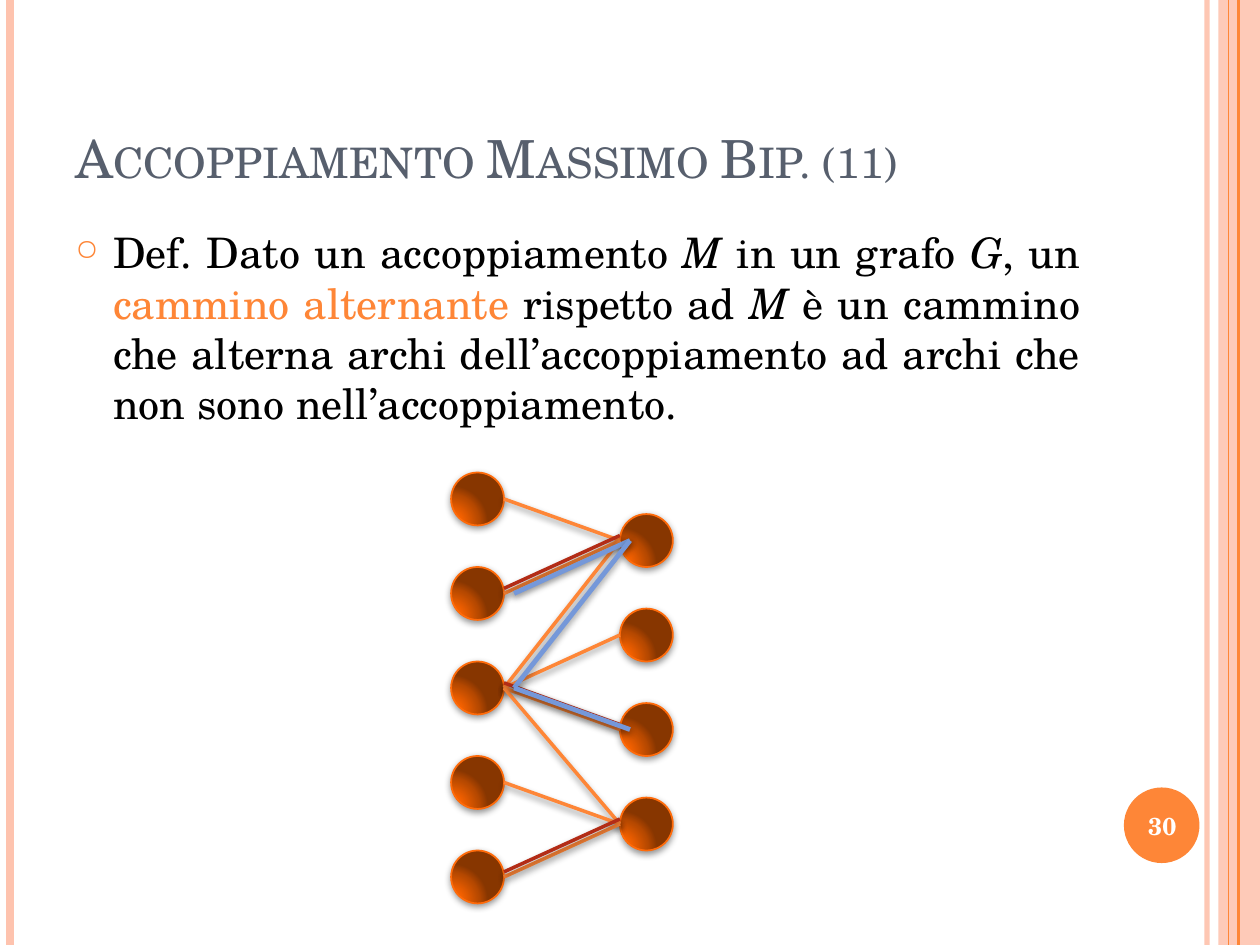
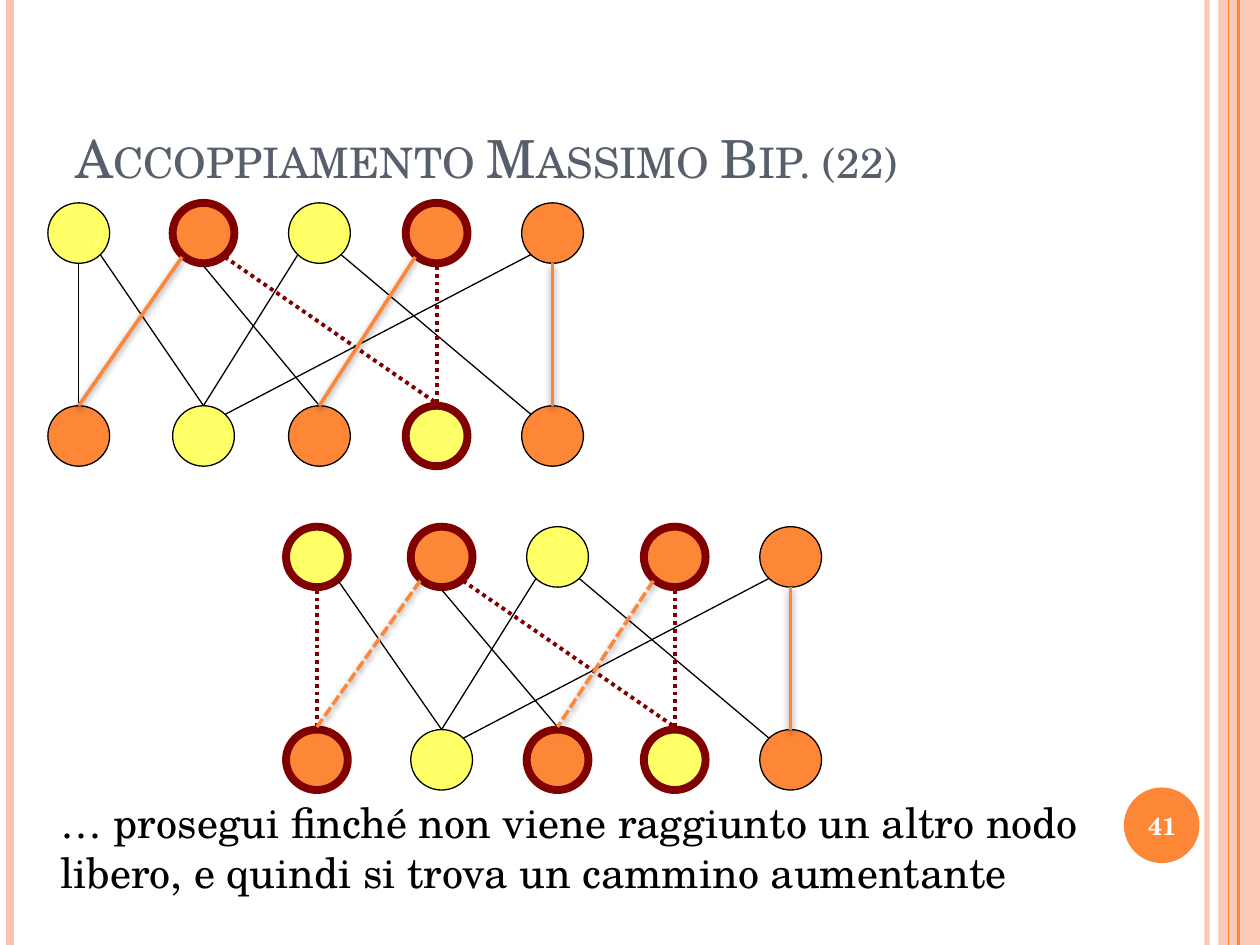
from dataclasses import dataclass
from typing import Optional

from lxml import etree
from pptx import Presentation, oxml
from pptx import util as u
from pptx.dml.color import RGBColor
from pptx.enum import dml, shapes, text
from pptx.oxml import ns
from pptx.util import Inches

FONT = "TeX Gyre Schola"
COLORS = {
    "orange": "FE8637",
    "pink": "FEC3AE",
    "slate": "575F6D",
    "black": "000000",
    "white": "FFFFFF",
    "yellow": "FFFF66",
    "maroon": "800000",
    "red": "B32C16",
    "blue": "7598D9",
    "node_edge": "FF6B0A",
}
SPHERE_STOPS = [(0, "FD6400"), (30, "F46100"), (75, "B74900"), (100, "873600")]


@dataclass(frozen=True)
class Shadow:
    alpha: int
    distance: float


@dataclass(frozen=True)
class Stroke:
    color: str
    width: float
    dash: Optional[dml.MSO_LINE] = None
    shadow: Optional[Shadow] = None
    alpha: int = 100


@dataclass(frozen=True)
class Run:
    text: str
    color: str = "black"
    italic: bool = False
    bold: bool = False
    size: int = 24
    small_caps: bool = False


@dataclass(frozen=True)
class Link:
    top: int
    bottom: int
    top_side: int = 0
    bottom_side: int = 0


@dataclass(frozen=True)
class Matching:
    left: float
    top: float
    outlined_tops: set
    outlined_bottoms: set
    dotted: set
    dashed: set


SOFT = Shadow(40, 2)
FIRM = Shadow(42, 1.6)
EDGE = Stroke("orange", 2, shadow=SOFT)
DASHED_EDGE = Stroke("orange", 2, dml.MSO_LINE.SQUARE_DOT, SOFT)
MATCHED_EDGE = Stroke("red", 2, shadow=SOFT)
PATH_EDGE = Stroke("blue", 2.75, shadow=FIRM)
THIN = Stroke("black", 0.75)
OUTLINE = Stroke("maroon", 4.5)
DOTTED = Stroke("maroon", 2.25, dml.MSO_LINE.ROUND_DOT)
SPHERE_EDGE = Stroke("node_edge", 1)

BANDS = [
    (9.58, Stroke("pink", 3, alpha=93)),
    (0.08, Stroke("pink", 4.5)),
    (9.83, Stroke("orange", 1.5)),
    (9.75, Stroke("orange", 0.75)),
]

NODE_OFFSETS = [0, 0.99, 1.91, 2.84, 3.76]
NODE_WIDTH, NODE_HEIGHT, ROW_GAP = 0.49, 0.48, 1.61
TOP_FILLS = ["yellow", "orange", "yellow", "orange", "orange"]
BOTTOM_FILLS = ["orange", "yellow", "orange", "yellow", "orange"]
LINKS = [
    Link(0, 1, 1), Link(0, 0), Link(1, 3, 1), Link(1, 2), Link(1, 0, -1),
    Link(4, 1, -1, 1), Link(4, 4), Link(2, 4, 1, -1), Link(3, 2, -1),
    Link(3, 3), Link(2, 1, -1),
]
MATCHED = {(1, 0), (4, 4), (3, 2)}
MATCHINGS = [
    Matching(0.38, 1.61, {1, 3}, {3}, {(1, 3), (3, 3)}, set()),
    Matching(2.27, 4.18, {0, 1, 3}, {0, 2, 3}, {(0, 0), (1, 3), (3, 3)}, {(1, 0), (3, 2)}),
]

SPHERE_EDGES = [(0, 0), (1, 0), (2, 0), (2, 1), (2, 2), (2, 3), (3, 3), (4, 3)]
SPHERE_MATCHED = [(1, 0), (2, 2), (4, 3)]
SPHERE_PATH = [(1, 0), (2, 0), (2, 2)]
SPHERE_SIZE, SPHERE_STEP = 0.42, 0.75
LEFT_X, LEFT_Y = 3.58, 3.75
RIGHT_X, RIGHT_Y = 4.92, 4.08

DEFINITION = [
    Run("Def. Dato un accoppiamento "),
    Run("M", italic=True),
    Run(" in un grafo "),
    Run("G", italic=True),
    Run(", un "),
    Run("cammino alternante ", "orange"),
    Run("rispetto ad "),
    Run("M", italic=True),
    Run(" è un cammino che alterna archi dell’accoppiamento ad archi che non sono nell’accoppiamento."),
]
CONCLUSION = [
    Run("… prosegui finché non viene raggiunto un altro nodo libero, e quindi si trova un cammino aumentante")
]


def rgb(name: str) -> RGBColor:
    return RGBColor.from_string(COLORS[name])


def set_alpha(element, percent: int) -> None:
    for color in element.iter(ns.qn("a:srgbClr")):
        etree.SubElement(color, ns.qn("a:alpha"), val=str(percent * 1000))


def add_shadow(effects, shadow: Shadow) -> None:
    effects.append(oxml.parse_xml(
        f'<a:outerShdw {ns.nsdecls("a")} blurRad="{u.Pt(4)}" dist="{u.Pt(shadow.distance)}" '
        f'dir="5400000" rotWithShape="0"><a:srgbClr val="{COLORS["black"]}">'
        f'<a:alpha val="{shadow.alpha * 1000}"/></a:srgbClr></a:outerShdw>'
    ))


def apply_stroke(line, stroke: Stroke) -> None:
    line.color.rgb = rgb(stroke.color)
    line.width = u.Pt(stroke.width)
    if stroke.dash is not None:
        line.dash_style = stroke.dash


def add_line(slide, start: tuple, end: tuple, stroke: Stroke) -> None:
    connector = slide.shapes.add_connector(
        shapes.MSO_CONNECTOR.STRAIGHT, *(Inches(value) for value in (*start, *end))
    )
    apply_stroke(connector.line, stroke)
    properties = connector.element.spPr
    if stroke.alpha < 100:
        set_alpha(properties, stroke.alpha)
    effects = etree.SubElement(properties, ns.qn("a:effectLst"))
    if stroke.shadow:
        add_shadow(effects, stroke.shadow)


def add_filled(slide, kind, box: tuple, fill: str, stroke: Optional[Stroke] = None):
    shape = slide.shapes.add_shape(kind, *(Inches(value) for value in box))
    shape.shadow.inherit = False
    shape.fill.solid()
    shape.fill.fore_color.rgb = rgb(fill)
    if stroke:
        apply_stroke(shape.line, stroke)
    else:
        shape.line.fill.background()
    return shape


def add_sphere(slide, left: float, top: float) -> None:
    shape = add_filled(slide, shapes.MSO_SHAPE.OVAL,
                       (left, top, SPHERE_SIZE, SPHERE_SIZE), "orange", SPHERE_EDGE)
    properties = shape.element.spPr
    stops = "".join(
        f'<a:gs pos="{position * 1000}"><a:srgbClr val="{color}"/></a:gs>'
        for position, color in SPHERE_STOPS
    )
    gradient = oxml.parse_xml(
        f'<a:gradFill {ns.nsdecls("a")} rotWithShape="1"><a:gsLst>{stops}</a:gsLst>'
        '<a:path path="circle"><a:fillToRect l="5000" t="100000" r="120000" b="10000"/>'
        '</a:path></a:gradFill>'
    )
    properties.replace(properties.find(ns.qn("a:solidFill")), gradient)
    add_shadow(properties.find(ns.qn("a:effectLst")), FIRM)


def add_text(slide, box: tuple, runs: list, anchor=text.MSO_ANCHOR.TOP,
             alignment=text.PP_ALIGN.LEFT):
    frame = slide.shapes.add_textbox(*(Inches(value) for value in box)).text_frame
    frame.word_wrap = True
    frame.vertical_anchor = anchor
    paragraph = frame.paragraphs[0]
    paragraph.alignment = alignment
    for item in runs:
        run = paragraph.add_run()
        run.text = item.text
        run.font.name = FONT
        run.font.size = u.Pt(item.size)
        run.font.color.rgb = rgb(item.color)
        run.font.italic = item.italic
        run.font.bold = item.bold
        if item.small_caps:
            run.font._element.set("cap", "small")
    return paragraph


def add_bullet(paragraph) -> None:
    paragraph.space_before = u.Pt(6)
    properties = paragraph._p.get_or_add_pPr()
    properties.set("marL", str(Inches(0.3)))
    properties.set("indent", str(Inches(-0.3)))
    color = etree.SubElement(properties, ns.qn("a:buClr"))
    etree.SubElement(color, ns.qn("a:srgbClr"), val=COLORS["orange"])
    etree.SubElement(properties, ns.qn("a:buSzPct"), val="70000")
    etree.SubElement(properties, ns.qn("a:buChar"), char="○")


def add_base_slide(presentation, part: int, number: int):
    slide = presentation.slides.add_slide(presentation.slide_layouts[6])
    band = add_filled(slide, shapes.MSO_SHAPE.RECTANGLE, (9.67, 0, 0.33, 7.5), "pink")
    set_alpha(band.element.spPr, 87)
    for x, stroke in BANDS:
        add_line(slide, (x, 0), (x, 7.5), stroke)
    add_filled(slide, shapes.MSO_SHAPE.OVAL, (8.92, 6.25, 0.6, 0.6), "orange")
    add_text(slide, (8.89, 6.27, 0.67, 0.57), [Run(str(number), "white", bold=True, size=14)],
             text.MSO_ANCHOR.MIDDLE, text.PP_ALIGN.CENTER)
    title = Run(f"Accoppiamento Massimo Bip. ({part})", "slate", size=30, small_caps=True)
    add_text(slide, (0.5, 0.3, 8.17, 1.25), [title], text.MSO_ANCHOR.BOTTOM)
    return slide


def add_sphere_edges(slide, edges: list, stroke: Stroke, dx: float = 0, dy: float = 0) -> None:
    radius = SPHERE_SIZE / 2
    for left, right in edges:
        start = (LEFT_X + SPHERE_SIZE + dx, LEFT_Y + radius + left * SPHERE_STEP + dy)
        end = (RIGHT_X + dx, RIGHT_Y + radius + right * SPHERE_STEP + dy)
        add_line(slide, start, end, stroke)


def add_matching(slide, matching: Matching) -> None:
    bottom_y = matching.top + ROW_GAP
    rows = [
        (matching.top, TOP_FILLS, matching.outlined_tops),
        (bottom_y, BOTTOM_FILLS, matching.outlined_bottoms),
    ]
    for y, fills, outlined in rows:
        for index, (offset, fill) in enumerate(zip(NODE_OFFSETS, fills)):
            add_filled(slide, shapes.MSO_SHAPE.OVAL,
                       (matching.left + offset, y, NODE_WIDTH, NODE_HEIGHT),
                       fill, OUTLINE if index in outlined else THIN)
    center = matching.left + NODE_WIDTH / 2
    for link in LINKS:
        pair = (link.top, link.bottom)
        start_y = matching.top + (0.41 if link.top_side else NODE_HEIGHT)
        end_y = bottom_y + (0.07 if link.bottom_side else 0)
        start_y += 0.02 * (link.top in matching.outlined_tops)
        end_y -= 0.02 * (link.bottom in matching.outlined_bottoms)
        if pair in matching.dotted:
            stroke = DOTTED
        elif pair in matching.dashed:
            stroke = DASHED_EDGE
        else:
            stroke = EDGE if pair in MATCHED else THIN
        add_line(slide,
                 (center + NODE_OFFSETS[link.top] + 0.17 * link.top_side, start_y),
                 (center + NODE_OFFSETS[link.bottom] + 0.17 * link.bottom_side, end_y),
                 stroke)


def main() -> None:
    presentation = Presentation()
    presentation.slide_width = Inches(10)
    presentation.slide_height = Inches(7.5)

    alternating = add_base_slide(presentation, 11, 30)
    add_bullet(add_text(alternating, (0.5, 1.75, 8.17, 1.58), DEFINITION,
                        alignment=text.PP_ALIGN.JUSTIFY))
    for x, y, count in [(LEFT_X, LEFT_Y, 5), (RIGHT_X, RIGHT_Y, 4)]:
        for row in range(count):
            add_sphere(alternating, x, y + row * SPHERE_STEP)
    add_sphere_edges(alternating, SPHERE_EDGES, EDGE)
    add_sphere_edges(alternating, SPHERE_MATCHED, MATCHED_EDGE, dy=-0.04)
    add_sphere_edges(alternating, SPHERE_PATH, PATH_EDGE, dx=0.08)

    augmenting = add_base_slide(presentation, 22, 41)
    for matching in MATCHINGS:
        add_matching(augmenting, matching)
    add_text(augmenting, (0.38, 6.27, 8.87, 0.91), CONCLUSION)

    presentation.save("out.pptx")


if __name__ == "__main__":
    main()
